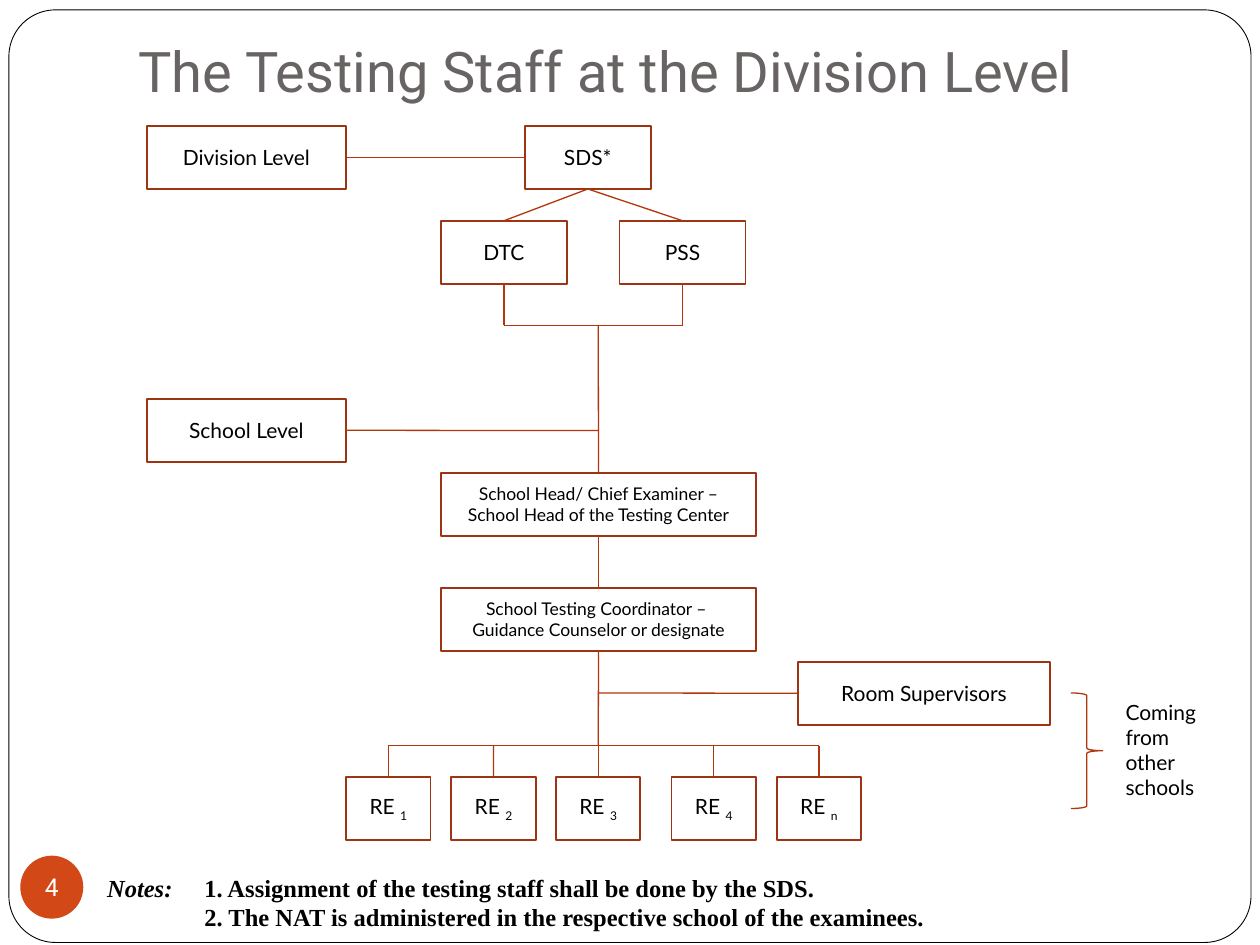
from dataclasses import dataclass
from lxml.etree import SubElement
from pptx import Presentation
from pptx.dml.color import RGBColor
from pptx.enum.shapes import MSO_CONNECTOR, MSO_SHAPE
from pptx.enum.text import MSO_ANCHOR, PP_ALIGN
from pptx.oxml.ns import qn
from pptx.util import Cm, Pt

BLACK = RGBColor(0x00, 0x00, 0x00)
WHITE = RGBColor(0xFF, 0xFF, 0xFF)
GREY = RGBColor(0x69, 0x64, 0x64)
ORANGE = RGBColor(0xD3, 0x48, 0x17)
BORDER = RGBColor(0x9C, 0x35, 0x11)
LINK = RGBColor(0xB1, 0x36, 0x0B)
TOP, LEFT, BOTTOM, RIGHT = range(4)
BOX_HEIGHT = 1.27
TRUNK = 12.06


@dataclass
class StaffChart:
    """Draws the boxes, links and texts of a staff chart on one page."""

    page: object
    font: str = "Lato"
    size: float = 12

    def shape(self, kind, left, top, width, height, fill=None, line=None, weight=1):
        shape = self.page.shapes.add_shape(kind, Cm(left), Cm(top), Cm(width), Cm(height))
        shape.shadow.inherit = False
        if fill is None:
            shape.fill.background()
        else:
            shape.fill.solid()
            shape.fill.fore_color.rgb = fill
        if line is None:
            shape.line.fill.background()
        else:
            shape.line.color.rgb = line
            shape.line.width = Pt(weight)
        return shape

    def add_span(self, para, text, size=None, font=None, color=BLACK):
        span = para.add_run()
        span.text = text
        span.font.size = Pt(size or self.size)
        span.font.name = font or self.font
        span.font.color.rgb = color
        return span

    def box(self, left, top, width, *lines, size=None, subscript=None):
        box = self.shape(MSO_SHAPE.RECTANGLE, left, top, width, BOX_HEIGHT, line=BORDER)
        frame = box.text_frame
        frame.word_wrap = True
        frame.vertical_anchor = MSO_ANCHOR.MIDDLE
        for index, text in enumerate(lines):
            para = frame.add_paragraph() if index else frame.paragraphs[0]
            para.alignment = PP_ALIGN.CENTER
            self.add_span(para, text, size)
        if subscript:
            span = self.add_span(para, subscript, size)
            span._r.get_or_add_rPr().set("baseline", "-25000")
        return box

    def text(self, left, top, width, height):
        box = self.page.shapes.add_textbox(Cm(left), Cm(top), Cm(width), Cm(height))
        box.text_frame.word_wrap = True
        return box.text_frame

    def link(self, start, end):
        """Joins two ends, each a (box, side) pair or an (x, y) point in cm."""
        points = [(0, 0) if hasattr(place[0], "shape_id") else place for place in (start, end)]
        line = self.page.shapes.add_connector(
            MSO_CONNECTOR.STRAIGHT, *(Cm(value) for point in points for value in point))
        for place, connect in ((start, line.begin_connect), (end, line.end_connect)):
            if hasattr(place[0], "shape_id"):
                connect(*place)
        line.line.color.rgb = LINK
        line.line.width = Pt(0.75)
        SubElement(line._element.spPr, qn("a:effectLst"))

    def note(self, para, text, label=None, indent=1.96):
        properties = para._p.get_or_add_pPr()
        properties.set("marL", str(Cm(indent)))
        properties.set("indent", str(Cm(-indent if label else 0)))
        spans = []
        if label:
            spans.append(self.add_span(para, label + "\t", 14, "Times New Roman"))
            spans[0].font.italic = True
        spans.append(self.add_span(para, text, 14, "Times New Roman"))
        for span in spans:
            span.font.bold = True


def main():
    deck = Presentation()
    deck.slide_width, deck.slide_height = Cm(25.4), Cm(19.05)
    chart = StaffChart(deck.slides.add_slide(deck.slide_layouts[6]))

    border = chart.shape(MSO_SHAPE.ROUNDED_RECTANGLE, 0.18, 0.2, 25.04, 18.8, WHITE, BLACK, 0.5)
    border.adjustments[0] = 0.05
    title = chart.text(2.54, 0.23, 19.89, 2.11)
    title.vertical_anchor = MSO_ANCHOR.BOTTOM
    title.margin_bottom = Cm(0.25)
    chart.add_span(title.paragraphs[0], "The Testing Staff at the Division Level", 32, "Roboto", GREY)

    badge = chart.shape(MSO_SHAPE.OVAL, 0.41, 17.25, 1.27, 1.27, ORANGE).text_frame
    badge.margin_left = badge.margin_right = badge.margin_top = badge.margin_bottom = 0
    badge.word_wrap = False
    badge.vertical_anchor = MSO_ANCHOR.MIDDLE
    badge.paragraphs[0].alignment = PP_ALIGN.CENTER
    chart.add_span(badge.paragraphs[0], "4", 14, "Roboto", WHITE)

    division = chart.box(2.96, 2.54, 4.02, "Division Level")
    sds = chart.box(10.58, 2.54, 2.54, "SDS*")
    dtc = chart.box(8.89, 4.45, 2.54, "DTC")
    pss = chart.box(12.49, 4.45, 2.54, "PSS")
    school = chart.box(2.96, 8.04, 4.02, "School Level")
    head = chart.box(8.89, 9.53, 6.35,
                     "School Head/ Chief Examiner – School Head of the Testing Center", size=10)
    coordinator = chart.box(8.89, 11.85, 6.35, "School Testing Coordinator – ",
                            "Guidance Counselor or designate", size=10)
    supervisors = chart.box(16.09, 13.34, 5.08, "Room Supervisors")

    chart.link((division, RIGHT), (sds, LEFT))
    staff_bus, examiner_bus = 6.56, 15.03
    for box, center in ((dtc, 10.16), (pss, 13.76)):
        chart.link((sds, BOTTOM), (box, TOP))
        chart.link((box, BOTTOM), (center, staff_bus))
    chart.link((10.16, staff_bus), (13.76, staff_bus))
    chart.link((head, TOP), (TRUNK, staff_bus))
    chart.link((school, RIGHT), (TRUNK, 8.68))
    chart.link((head, BOTTOM), (coordinator, TOP))
    chart.link((coordinator, BOTTOM), (TRUNK, examiner_bus))
    chart.link((supervisors, LEFT), (TRUNK, 13.97))

    centers = (7.83, 9.95, TRUNK, 14.39, 16.51)
    chart.link((centers[0], examiner_bus), (centers[-1], examiner_bus))
    for center, number in zip(centers, "1234n"):
        examiner = chart.box(center - 0.85, 15.66, 1.7, "RE ", subscript=number)
        chart.link((center, examiner_bus), (examiner, TOP))

    chart.shape(MSO_SHAPE.RIGHT_BRACE, 21.59, 13.97, 0.64, 2.33, line=LINK, weight=0.75)
    origin = chart.text(22.44, 13.97, 2.12, 2.31)
    chart.add_span(origin.paragraphs[0], "Coming from other schools")

    notes = chart.text(1.91, 17.47, 18.62, 1.45)
    chart.note(notes.paragraphs[0], "1. Assignment of the testing staff shall be done by the SDS.", "Notes:")
    chart.note(notes.add_paragraph(),
               "2. The NAT is administered in the respective school of the examinees.")

    deck.save("out.pptx")


if __name__ == "__main__":
    main()
